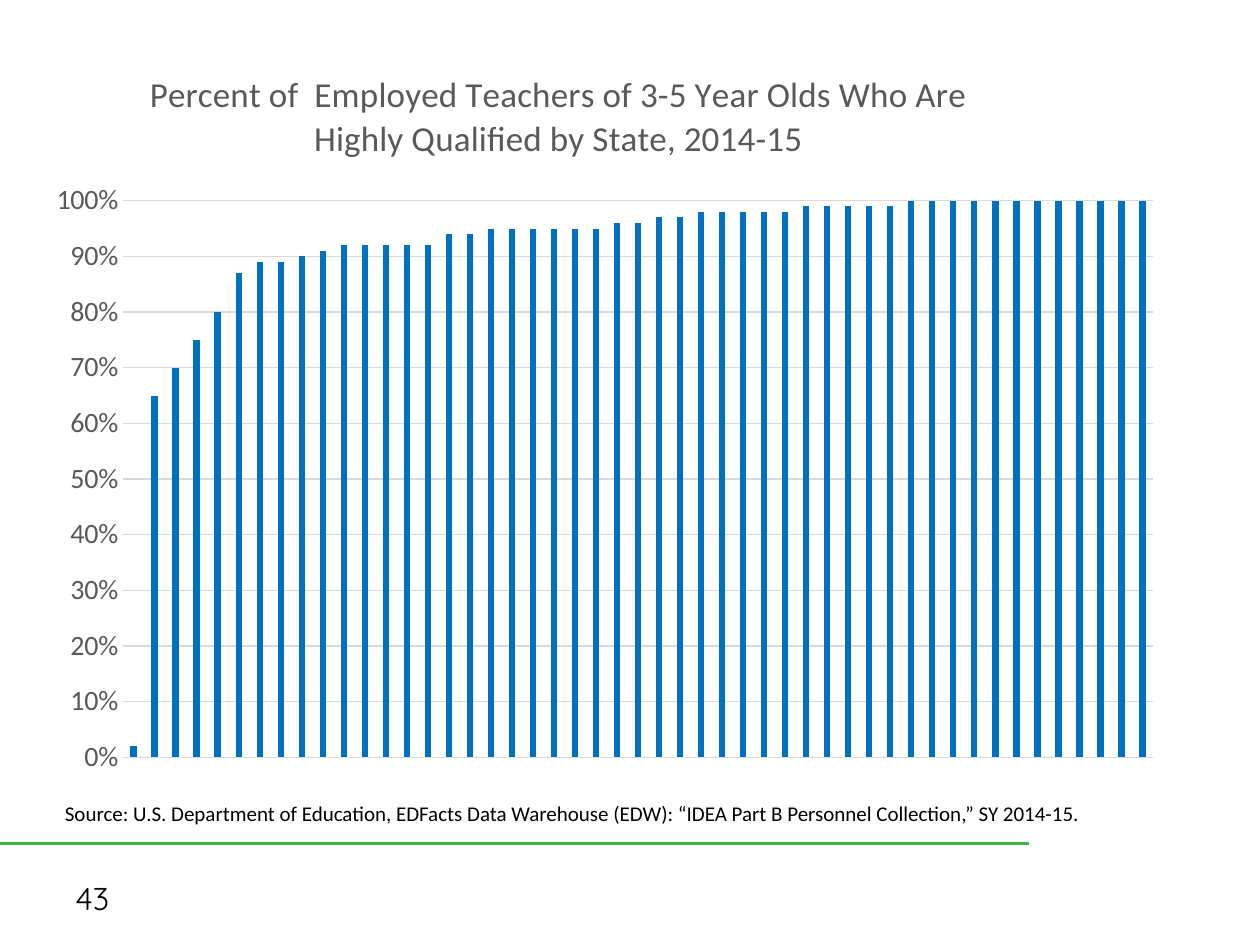
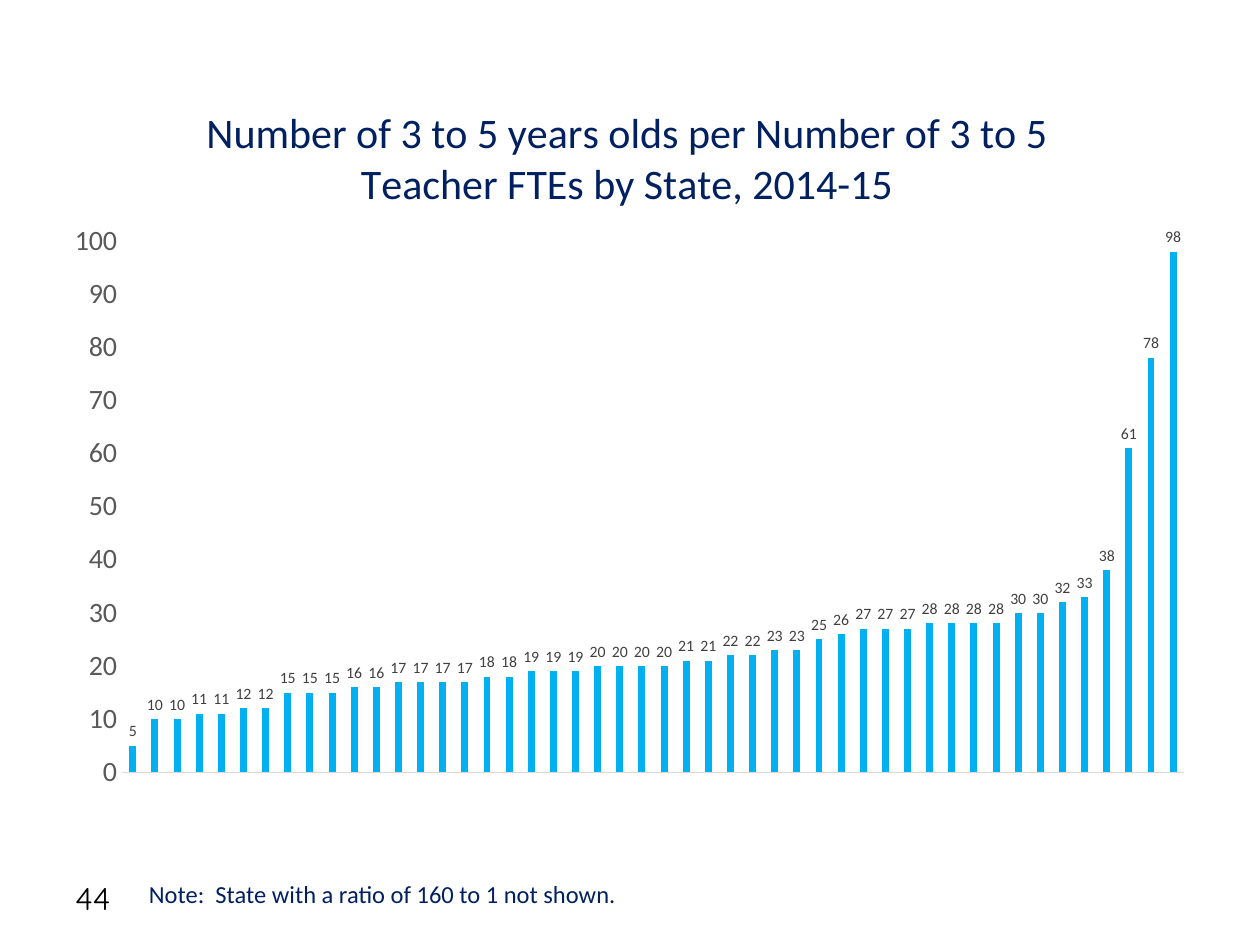
from dataclasses import dataclass

from lxml.etree import SubElement
from pptx import Presentation
from pptx.chart.data import CategoryChartData
from pptx.dml.color import RGBColor as RGB
from pptx.enum.chart import XL_CHART_TYPE as CHART, XL_LABEL_POSITION as LABEL
from pptx.enum.chart import XL_TICK_LABEL_POSITION as TICK_LABEL, XL_TICK_MARK as TICK
from pptx.enum.shapes import MSO_CONNECTOR as CONNECTOR
from pptx.enum.text import MSO_ANCHOR as ANCHOR, MSO_AUTO_SIZE as AUTO_SIZE
from pptx.oxml import parse_xml
from pptx.oxml.ns import nsdecls, qn
from pptx.util import Pt


@dataclass(frozen=True)
class Theme:
    """Colours, fonts and type sizes shared by the slides."""
    body: str = "Calibri"
    number: str = "Quicksand"
    black: str = "000000"
    grey: str = "595959"
    dark: str = "404040"
    rule: str = "D9D9D9"
    navy: str = "002060"
    green: str = "39B54A"
    blue: str = "0070C0"
    sky: str = "00B0F0"
    label_size: int = 9
    base_size: int = 10
    source_size: int = 12
    note_size: int = 14
    axis_size: int = 16
    number_size: int = 18
    qualified_title: int = 20
    ratio_title: int = 24


T = Theme()

QUALIFIED = [0.02, 0.65, 0.7, 0.75, 0.8, 0.87, 0.89, 0.89, 0.9, 0.91,
             *[0.92] * 4, 0.92, 0.94, 0.94, *[0.95] * 6, 0.96, 0.96,
             0.97, 0.97, *[0.98] * 5, *[0.99] * 5, *[1] * 12]
RATIOS = [5, 10, 10, 11, 11, 12, 12, 15, 15, 15, 16, 16, 17, 17, 17, 17,
          18, 18, 19, 19, 19, 20, 20, 20, 20, 21, 21, 22, 22, 23, 23, 25,
          26, 27, 27, 27, 28, 28, 28, 28, 30, 30, 32, 33, 38, 61, 78, 98]


def set_font(font, size, color, name=T.body):
    """Set size, colour and typeface of a font."""
    font.size, font.name, font.bold = Pt(size), name, False
    font.color.rgb = RGB.from_string(color)


def set_line(line, color, width=0.75):
    """Give a line its colour and width in points."""
    line.color.rgb = RGB.from_string(color)
    line.width = Pt(width)


def set_layout(parent, index, inner=False, **fractions):
    """Place a chart part at fractions of the chart size."""
    for old in parent.findall(qn("c:layout")):
        parent.remove(old)
    layout = parse_xml(f"<c:layout {nsdecls('c')}><c:manualLayout/></c:layout>")
    manual = layout[0]
    if inner:
        SubElement(manual, qn("c:layoutTarget")).set("val", "inner")
    for key in ("x", "y"):
        SubElement(manual, qn(f"c:{key}Mode")).set("val", "edge")
    for key, value in fractions.items():
        SubElement(manual, qn(f"c:{key}")).set("val", str(value))
    parent.insert(index, layout)


def add_title(chart, lines, size, color, x, y):
    """Write the chart title, one paragraph a line."""
    tf = chart.chart_title.text_frame
    tf.text = "\n".join(lines)
    for p in tf.paragraphs:
        set_font(p.runs[0].font, size, color)
    set_layout(chart.chart_title._element, 1, x=x, y=y)


def style_axes(chart, top, number_format, grid):
    """Format both axes, with ten steps on the value axis."""
    cat, val = chart.category_axis, chart.value_axis
    for axis, size in ((cat, T.label_size), (val, T.axis_size)):
        axis.major_tick_mark = axis.minor_tick_mark = TICK.NONE
        set_font(axis.tick_labels.font, size, T.grey)
    cat.tick_label_position = TICK_LABEL.NONE
    set_line(cat.format.line, T.rule)
    val.format.line.fill.background()
    val.minimum_scale, val.maximum_scale, val.major_unit = 0, top, top / 10
    val.tick_labels.number_format = number_format
    val.tick_labels.number_format_is_linked = False
    val.has_major_gridlines = grid
    if grid:
        set_line(val.major_gridlines.format.line, T.rule)


def add_columns(slide, box, values, color, gap, top, number_format, plot, grid=False):
    """Add a column chart of one series, one column a state."""
    data = CategoryChartData(number_format=number_format)
    data.categories = [str(n) for n in range(1, len(values) + 1)]
    data.add_series("Series 1", values)
    chart = slide.shapes.add_chart(CHART.COLUMN_CLUSTERED, *map(Pt, box), data).chart
    chart.has_legend = False
    set_font(chart.font, T.base_size, T.black)
    columns = chart.plots[0]
    columns.gap_width, columns.overlap = gap, -27
    columns.vary_by_categories = False
    fill = columns.series[0].format.fill
    fill.solid()
    fill.fore_color.rgb = RGB.from_string(color)
    style_axes(chart, top, number_format, grid)
    area = chart._chartSpace.find(".//" + qn("c:plotArea"))
    set_layout(area, 0, inner=True, **dict(zip("xywh", plot)))
    return chart


def add_labels(chart):
    """Show whole values above the columns."""
    labels = chart.plots[0].series[0].data_labels
    labels.show_value = True
    labels.position = LABEL.OUTSIDE_END
    labels.number_format, labels.number_format_is_linked = "0", False
    set_font(labels.font, T.label_size, T.dark)


def add_text(slide, box, text, size, color=T.black, name=T.body):
    """Add a wrapping text box of one paragraph."""
    tf = slide.shapes.add_textbox(*map(Pt, box)).text_frame
    tf.word_wrap = True
    tf.text = text
    set_font(tf.paragraphs[0].runs[0].font, size, color, name)
    return tf


def add_note(slide, box, text, size, color=T.black):
    """Add a note that grows with its text."""
    add_text(slide, box, text, size, color).auto_size = AUTO_SIZE.SHAPE_TO_FIT_TEXT


def add_number(slide, number):
    """Add the slide number at the foot."""
    tf = add_text(slide, (36, 498.5, 168, 28.75), str(number), T.number_size, name=T.number)
    tf.vertical_anchor = ANCHOR.MIDDLE


def add_rule(slide):
    """Draw the green footer rule."""
    line = slide.shapes.add_connector(CONNECTOR.STRAIGHT, 0, Pt(482), Pt(588), Pt(482))
    set_line(line.line, T.green, 1.5)
    SubElement(line._element.spPr, qn("a:effectLst"))


def build_qualified(slide):
    """Build the slide on highly qualified teachers."""
    add_rule(slide)
    chart = add_columns(slide, (18, 30, 654, 424), QUALIFIED, T.blue, 234, 1, "0%",
                        (0.08, 0.2, 0.9, 0.75), grid=True)
    add_title(chart, ("Percent of  Employed Teachers of 3-5 Year Olds Who Are",
                      "Highly Qualified by State, 2014-15"),
              T.qualified_title, T.grey, 0.1, 0.02)
    add_note(slide, (30, 454, 606, 22),
             "Source: U.S. Department of Education, EDFacts Data Warehouse (EDW): "
             "“IDEA Part B Personnel Collection,” SY 2014-15.", T.source_size)
    add_number(slide, 43)


def build_ratio(slide):
    """Build the slide on children per teacher."""
    chart = add_columns(slide, (30, 42, 660, 416), RATIOS, T.sky, 219, 100, "0",
                        (0.06, 0.23, 0.92, 0.73))
    add_title(chart, ("Number of 3 to 5 years olds per Number of 3 to 5",
                      "Teacher FTEs by State, 2014-15"),
              T.ratio_title, T.navy, 0.13, 0.04)
    add_labels(chart)
    add_note(slide, (78, 498.5, 390, 24.25),
             "Note:  State with a ratio of 160 to 1 not shown.", T.note_size, T.navy)
    add_number(slide, 44)


def main():
    """Build and save the presentation."""
    prs = Presentation()
    prs.slide_width, prs.slide_height = Pt(720), Pt(540)
    for build in (build_qualified, build_ratio):
        build(prs.slides.add_slide(prs.slide_layouts[6]))
    prs.save("out.pptx")


if __name__ == "__main__":
    main()
